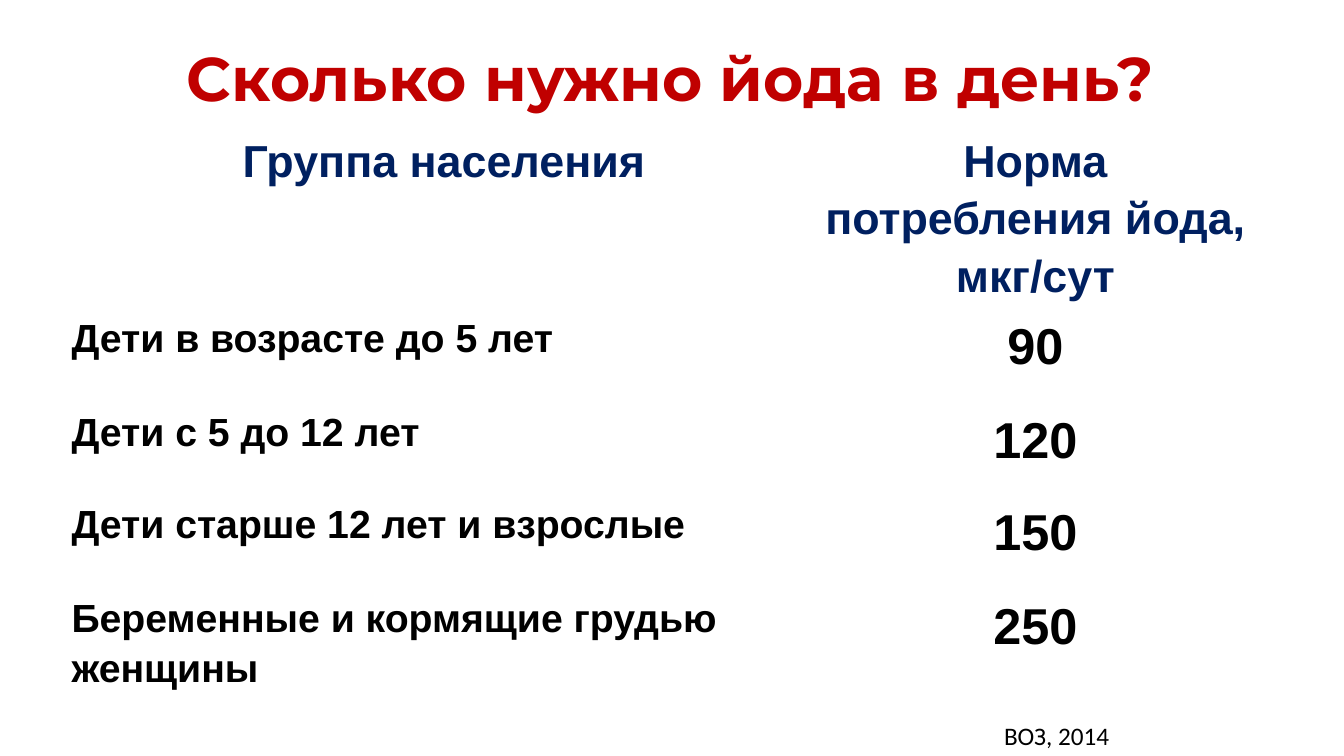
from pptx import Presentation
from pptx.dml.color import RGBColor
from pptx.enum.text import MSO_ANCHOR, PP_ALIGN
from pptx.util import Inches, Pt

COLORS = {"title": "C00000", "header": "002060", "text": "000000"}
HEADERS = ("Группа населения", "Норма потребления йода, мкг/сут")
NORMS = (
    ("Дети в возрасте до 5 лет", "90"),
    ("Дети с 5 до 12 лет", "120"),
    ("Дети старше 12 лет и взрослые", "150"),
    ("Беременные и кормящие грудью женщины", "250"),
)
COLUMN_WIDTHS = (7.47, 4.26)
ROW_HEIGHTS = (1.37, 0.93, 0.92, 0.93, 0.93)


def write(frame, text, font, size, color, bold=True, align=PP_ALIGN.LEFT):
    frame.text = text
    para = frame.paragraphs[0]
    para.alignment = align
    para.font.name = font
    para.font.size = Pt(size)
    para.font.bold = bold
    para.font.color.rgb = RGBColor.from_string(COLORS[color])
    return para


def add_title(page, text):
    title = page.shapes.title
    title.left, title.top = Inches(0.9), Inches(0.25)
    title.width, title.height = Inches(11.5), Inches(1.12)
    title.text_frame.vertical_anchor = MSO_ANCHOR.MIDDLE
    para = write(title.text_frame, text, "Montserrat", 44, "title", align=PP_ALIGN.CENTER)
    para.line_spacing = 0.9


def fill_cell(cell, text, size, color, align):
    cell.fill.background()
    cell.margin_left = cell.margin_right = Inches(0.04)
    cell.margin_top = cell.margin_bottom = Inches(0.04)
    para = write(cell.text_frame, text, "Arial", size, color, align=align)
    para.line_spacing = 1.15
    para.space_before = para.space_after = Pt(7.2)


def add_norms_table(page):
    table = page.shapes.add_table(
        len(ROW_HEIGHTS), len(COLUMN_WIDTHS), Inches(0.67), Inches(1.24),
        Inches(sum(COLUMN_WIDTHS)), Inches(sum(ROW_HEIGHTS))).table
    table.first_row = table.horz_banding = False
    for column, width in zip(table.columns, COLUMN_WIDTHS):
        column.width = Inches(width)
    for row, height in zip(table.rows, ROW_HEIGHTS):
        row.height = Inches(height)

    # Header row
    for index, text in enumerate(HEADERS):
        fill_cell(table.cell(0, index), text, 32, "header", PP_ALIGN.CENTER)

    # Population groups and their norms
    for index, (group, norm) in enumerate(NORMS, start=1):
        fill_cell(table.cell(index, 0), group, 28, "text", PP_ALIGN.LEFT)
        fill_cell(table.cell(index, 1), norm, 36, "text", PP_ALIGN.CENTER)


def add_citation(page, text):
    box = page.shapes.add_textbox(Inches(9.86), Inches(7.1), Inches(1.81), Inches(0.4))
    box.text_frame.word_wrap = True
    write(box.text_frame, text, "Calibri", 18, "text", bold=False)


def main():
    deck = Presentation()
    deck.slide_width, deck.slide_height = Inches(13.33), Inches(7.5)
    page = deck.slides.add_slide(deck.slide_layouts[5])
    add_title(page, "Сколько нужно йода в день?")
    add_norms_table(page)
    add_citation(page, "ВОЗ, 2014")
    deck.save("out.pptx")


if __name__ == "__main__":
    main()
